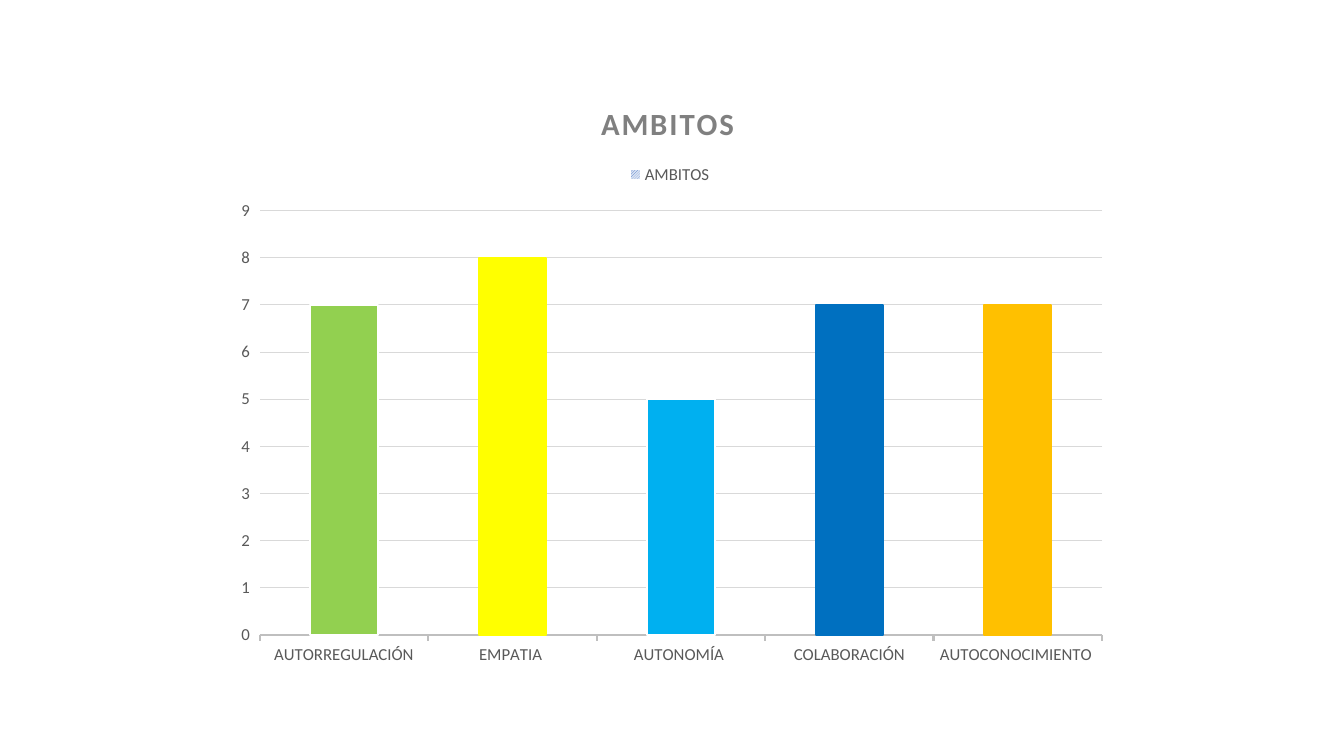
from dataclasses import dataclass

from lxml.etree import SubElement
from pptx import Presentation
from pptx.chart.chart import Chart
from pptx.chart.data import CategoryChartData
from pptx.chart.series import BarSeries
from pptx.dml.color import RGBColor
from pptx.dml.line import LineFormat
from pptx.enum.chart import XL_CHART_TYPE, XL_LEGEND_POSITION, XL_TICK_MARK
from pptx.enum.dml import MSO_PATTERN
from pptx.oxml.ns import qn
from pptx.text.text import Font, TextFrame
from pptx.util import Inches, Pt


@dataclass(frozen=True)
class Theme:
    font: str = "Calibri"
    title_size: int = 22
    label_size: int = 12
    title: str = "808080"
    label: str = "595959"
    axis: str = "BFBFBF"
    grid: str = "D9D9D9"
    outline: str = "FFFFFF"
    pattern_front: str = "4472C4"
    pattern_back: str = "DAE3F3"
    outline_width: float = 1.5
    grid_width: float = 0.75


@dataclass(frozen=True)
class Bar:
    name: str
    value: int
    color: str
    outline: str


@dataclass(frozen=True)
class Area:
    """Left, top, width and height as shares of the surrounding area."""
    left: float
    top: float
    width: float
    height: float


THEME = Theme()
TITLE = "AMBITOS "
BARS = [
    Bar("AUTORREGULACIÓN", 7, "92D050", THEME.outline),
    Bar("EMPATIA ", 8, "FFFF00", "FFFF00"),
    Bar("AUTONOMÍA ", 5, "00B0F0", THEME.outline),
    Bar("COLABORACIÓN", 7, "0070C0", "0070C0"),
    Bar("AUTOCONOCIMIENTO ", 7, "FFC000", "FFC000"),
]
CHART_AREA = Area(1 / 6, 0.105, 2 / 3, 0.79)
PLOT_AREA = Area(0.04, 0.22, 0.94, 0.71)


def style_font(font: Font, size: float, color: str, bold: bool = False) -> None:
    font.name = THEME.font
    font.size = Pt(size)
    font.bold = bold
    font.color.rgb = RGBColor.from_string(color)


def style_line(line: LineFormat, color: str, width: float) -> None:
    line.color.rgb = RGBColor.from_string(color)
    line.width = Pt(width)


def write_text(frame: TextFrame, text: str, *, size: float, color: str,
               bold: bool = False, spacing: int = 0) -> None:
    para = frame.paragraphs[0]
    span = para.add_run()
    span.text = text
    style_font(span.font, size, color, bold)
    span.font._element.set("spc", str(spacing))


def style_axes(chart: Chart) -> None:
    for axis in (chart.category_axis, chart.value_axis):
        style_font(axis.tick_labels.font, THEME.label_size, THEME.label)
        axis.minor_tick_mark = XL_TICK_MARK.NONE
    chart.category_axis.major_tick_mark = XL_TICK_MARK.OUTSIDE
    style_line(chart.category_axis.format.line, THEME.axis, THEME.outline_width)

    values = chart.value_axis
    values.major_tick_mark = XL_TICK_MARK.OUTSIDE
    values.minimum_scale, values.maximum_scale, values.major_unit = 0, 9, 1
    values.format.line.fill.background()
    values.has_major_gridlines = True
    style_line(values.major_gridlines.format.line, THEME.grid, THEME.grid_width)


def style_bars(series: BarSeries) -> None:
    fill = series.format.fill
    fill.patterned()
    fill.pattern = MSO_PATTERN.LIGHT_UPWARD_DIAGONAL
    fill.fore_color.rgb = RGBColor.from_string(THEME.pattern_front)
    fill.back_color.rgb = RGBColor.from_string(THEME.pattern_back)
    style_line(series.format.line, THEME.outline, THEME.outline_width)
    for index, bar in enumerate(BARS):
        shape = series.points[index].format
        shape.fill.solid()
        shape.fill.fore_color.rgb = RGBColor.from_string(bar.color)
        style_line(shape.line, bar.outline, THEME.outline_width)


def place_plot(chart: Chart, area: Area) -> None:
    plot_area = chart._chartSpace.chart.plotArea
    layout = plot_area.find(qn("c:layout"))
    if layout is None:
        layout = SubElement(plot_area, qn("c:layout"))
        plot_area.insert(0, layout)
    manual = SubElement(layout, qn("c:manualLayout"))
    settings = {"layoutTarget": "inner", "xMode": "edge", "yMode": "edge",
                "x": area.left, "y": area.top, "w": area.width, "h": area.height}
    for tag, value in settings.items():
        SubElement(manual, qn(f"c:{tag}")).set("val", str(value))


def main() -> None:
    # Page
    deck = Presentation()
    deck.slide_width, deck.slide_height = Inches(13.33), Inches(7.5)
    page = deck.slides.add_slide(deck.slide_layouts[6])

    # Chart data
    data = CategoryChartData()
    data.categories = [bar.name for bar in BARS]
    data.add_series(TITLE, [bar.value for bar in BARS])
    chart = page.shapes.add_chart(
        XL_CHART_TYPE.COLUMN_CLUSTERED,
        int(deck.slide_width * CHART_AREA.left),
        int(deck.slide_height * CHART_AREA.top),
        int(deck.slide_width * CHART_AREA.width),
        int(deck.slide_height * CHART_AREA.height),
        data,
    ).chart
    style_font(chart.font, THEME.label_size, THEME.label)

    # Title and legend
    chart.has_title = True
    write_text(chart.chart_title.text_frame, TITLE, size=THEME.title_size,
               color=THEME.title, bold=True, spacing=150)
    chart.has_legend = True
    chart.legend.position = XL_LEGEND_POSITION.TOP
    chart.legend.include_in_layout = False
    style_font(chart.legend.font, THEME.label_size, THEME.label)

    # Axes and bars
    style_axes(chart)
    plot = chart.plots[0]
    plot.gap_width = 150
    plot.vary_by_categories = False
    style_bars(plot.series[0])
    place_plot(chart, PLOT_AREA)

    deck.save("out.pptx")


if __name__ == "__main__":
    main()
